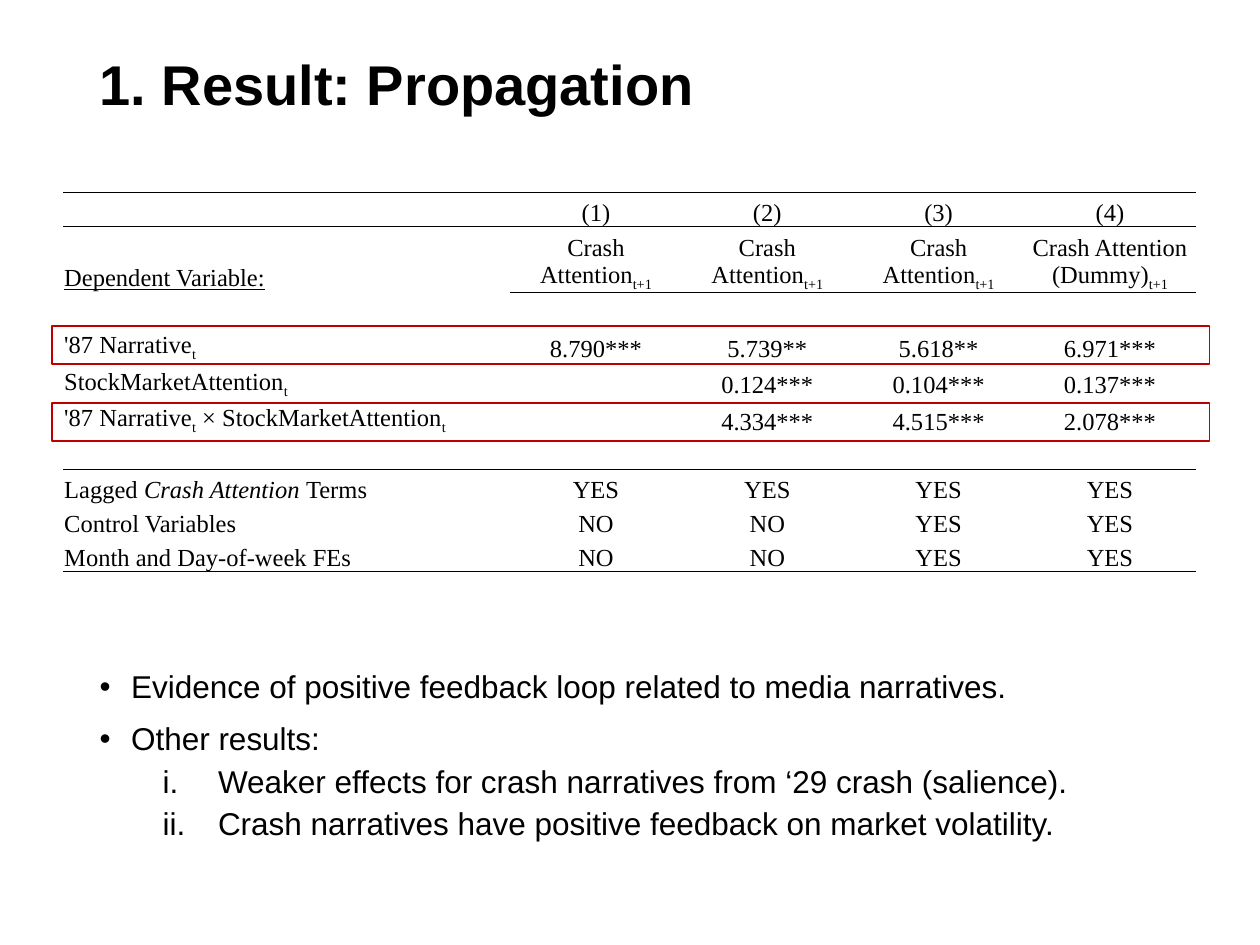
from lxml import etree
from pptx import Presentation
from pptx import util as u
from pptx.dml import color
from pptx.enum import shapes, text
from pptx.oxml import ns

BLACK, RED = "000000", "C00000"
SANS, SERIF = "Arial", "Times New Roman"
WIDE = [3.55, 1.36, 1.36, 1.36, 1.36]
TALL = [0.27, 0.52, 0.27, 0.29, 0.29, 0.29, 0.27, 0.27, 0.27, 0.27]
RULES = {0: 0, 1: 0, 2: 1, 7: 0, 10: 0}
MARKS = {
    "_": ("baseline", "-25000"),
    "*": ("i", "1"),
    "~": ("u", "sng"),
}
CRASH = "Crash Attention|_t+1"
BLANK = [""] * 5
ROWS = [
    ["", "(1)", "(2)", "(3)", "(4)"],
    ["~Dependent Variable:", CRASH, CRASH, CRASH, "Crash Attention (Dummy)|_t+1"],
    BLANK,
    ["'87 Narrative|_t", "8.790***", "5.739**", "5.618**", "6.971***"],
    ["StockMarketAttention|_t", "", "0.124***", "0.104***", "0.137***"],
    ["'87 Narrative|_t| × StockMarketAttention|_t", "", "4.334***", "4.515***", "2.078***"],
    BLANK,
    ["Lagged |*Crash Attention |Terms", "YES", "YES", "YES", "YES"],
    ["Control Variables", "NO", "NO", "YES", "YES"],
    ["Month and Day-of-week FEs", "NO", "NO", "YES", "YES"],
]
POINTS = [
    (0, "Evidence of positive feedback loop related to media narratives."),
    (0, "Other results:"),
    (1, "Weaker effects for crash narratives from ‘29 crash (salience)."),
    (1, "Crash narratives have positive feedback on market volatility."),
]


def rgb(code):
    return color.RGBColor.from_string(code)


def add(parent, tag, **attrs):
    return etree.SubElement(parent, ns.qn(tag), attrs)


class Deck:
    def __init__(self):
        self.prs = Presentation()
        self.prs.slide_width, self.prs.slide_height = u.Inches(10), u.Inches(7.5)
        self.slide = self.prs.slides.add_slide(self.prs.slide_layouts[1])

    def style(self, run, size, face, bold=False):
        font = run.font
        font.size, font.name, font.bold = u.Pt(size), face, bold
        font.color.rgb = rgb(BLACK)

    def place(self, shape, *box):
        shape.left, shape.top, shape.width, shape.height = map(u.Inches, box)
        frame = shape.text_frame
        frame.word_wrap = True
        frame.auto_size = text.MSO_AUTO_SIZE.NONE
        frame.vertical_anchor = text.MSO_ANCHOR.TOP
        return frame

    def title(self, words, *box):
        frame = self.place(self.slide.shapes.title, *box)
        frame.text = words
        para = frame.paragraphs[0]
        para.alignment = text.PP_ALIGN.LEFT
        para.line_spacing = 0.9
        self.style(para.runs[0], 32, SANS, True)

    def points(self, items, *box):
        frame = self.place(self.slide.placeholders[1], *box)
        frame.text = "\n".join(words for _, words in items)
        for para, (level, _) in zip(frame.paragraphs, items):
            para.level = level
            para.line_spacing = 0.9
            para.space_before = u.Pt(5 if level else 10)
            self.style(para.runs[0], 18, SANS)
            left, hang = (0.94, 0.44) if level else (0.25, 0.25)
            props = para._p.get_or_add_pPr()
            props.set("marL", str(u.Inches(left)))
            props.set("indent", str(-u.Inches(hang)))
            if level:
                add(props, "a:buFont", typeface="+mj-lt")
                add(props, "a:buAutoNum", type="romanLcPeriod")
            else:
                add(props, "a:buFont", typeface=SANS)
                add(props, "a:buChar", char="•")

    def edge(self, cell, row, col):
        props = cell._tc.get_or_add_tcPr()
        for spot, side in enumerate("LRTB"):
            line = etree.Element(ns.qn(f"a:ln{side}"), w=str(u.Pt(0.5)))
            rule = row + (side == "B")
            if side in "TB" and rule in RULES and col >= RULES[rule]:
                fill = add(line, "a:solidFill")
                add(fill, "a:srgbClr", val=BLACK)
            else:
                add(line, "a:noFill")
            props.insert(spot, line)

    def cell(self, cell, words, row, col):
        cell.fill.background()
        cell.vertical_anchor = text.MSO_ANCHOR.BOTTOM
        cell.margin_left = cell.margin_right = cell.margin_top = u.Inches(0.01)
        cell.margin_bottom = 0
        para = cell.text_frame.paragraphs[0]
        para.alignment = text.PP_ALIGN.CENTER if col else text.PP_ALIGN.LEFT
        for part in words.split("|") if words else []:
            mark = MARKS.get(part[0])
            run = para.add_run()
            run.text = part[1:] if mark else part
            self.style(run, 14, SERIF)
            if mark:
                run.font._element.set(*mark)
        if not words:
            add(para._p, "a:endParaRPr", sz="1400")
        self.edge(cell, row, col)

    def table(self, rows, left, top):
        box = map(u.Inches, (left, top, sum(WIDE), sum(TALL)))
        grid = self.slide.shapes.add_table(len(rows), len(WIDE), *box).table
        grid.first_row = grid.horz_banding = False
        for col, width in zip(grid.columns, WIDE):
            col.width = u.Inches(width)
        for row, height in zip(grid.rows, TALL):
            row.height = u.Inches(height)
        for row, line in enumerate(rows):
            for col, words in enumerate(line):
                self.cell(grid.cell(row, col), words, row, col)

    def frame(self, *box):
        kind = shapes.MSO_SHAPE.RECTANGLE
        rect = self.slide.shapes.add_shape(kind, *map(u.Inches, box))
        rect.shadow.inherit = False
        rect.fill.background()
        rect.line.color.rgb = rgb(RED)
        rect.line.width = u.Pt(1)


def main():
    deck = Deck()
    deck.title("1. Result: Propagation", 0.69, 0.4, 8.62, 1.13)
    deck.points(POINTS, 0.69, 5.28, 8.62, 1.95)
    deck.table(ROWS, 0.5, 1.53)
    for top in (2.59, 3.2):
        deck.frame(0.41, top, 9.19, 0.3)
    deck.prs.save("out.pptx")


if __name__ == "__main__":
    main()
